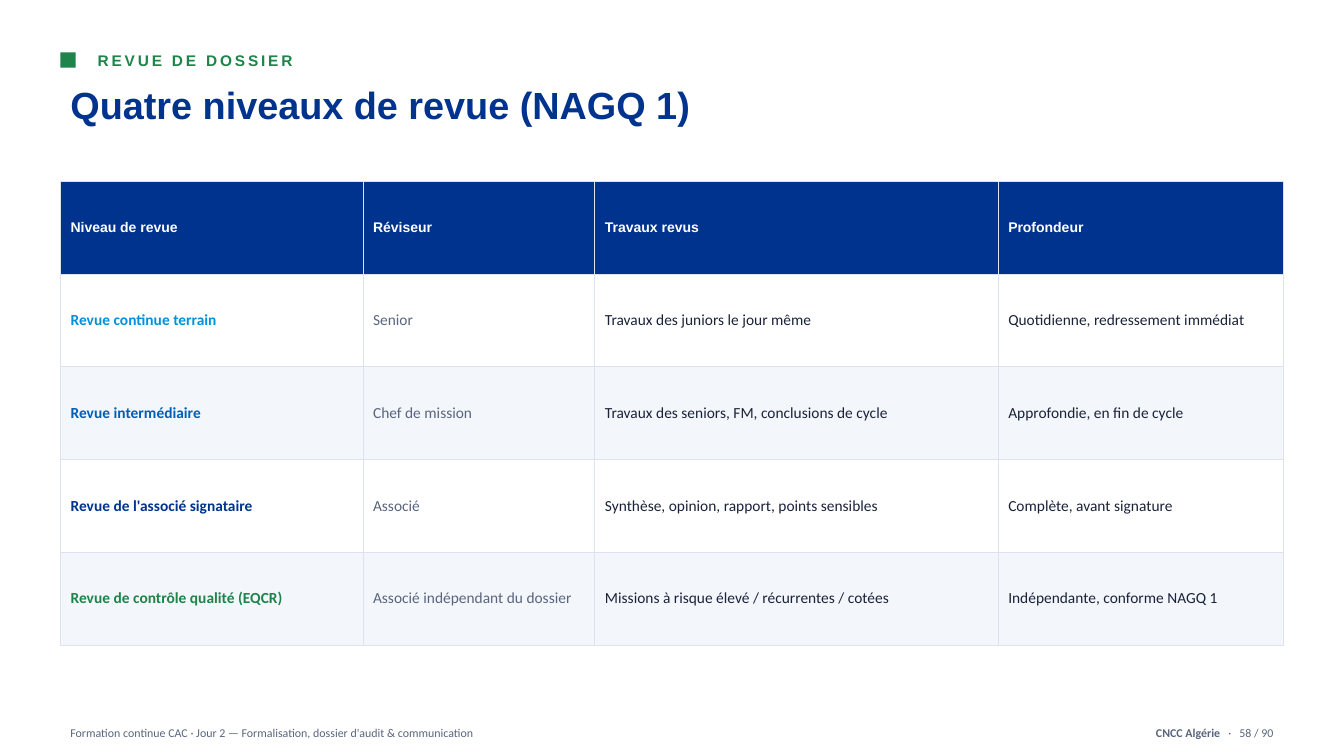
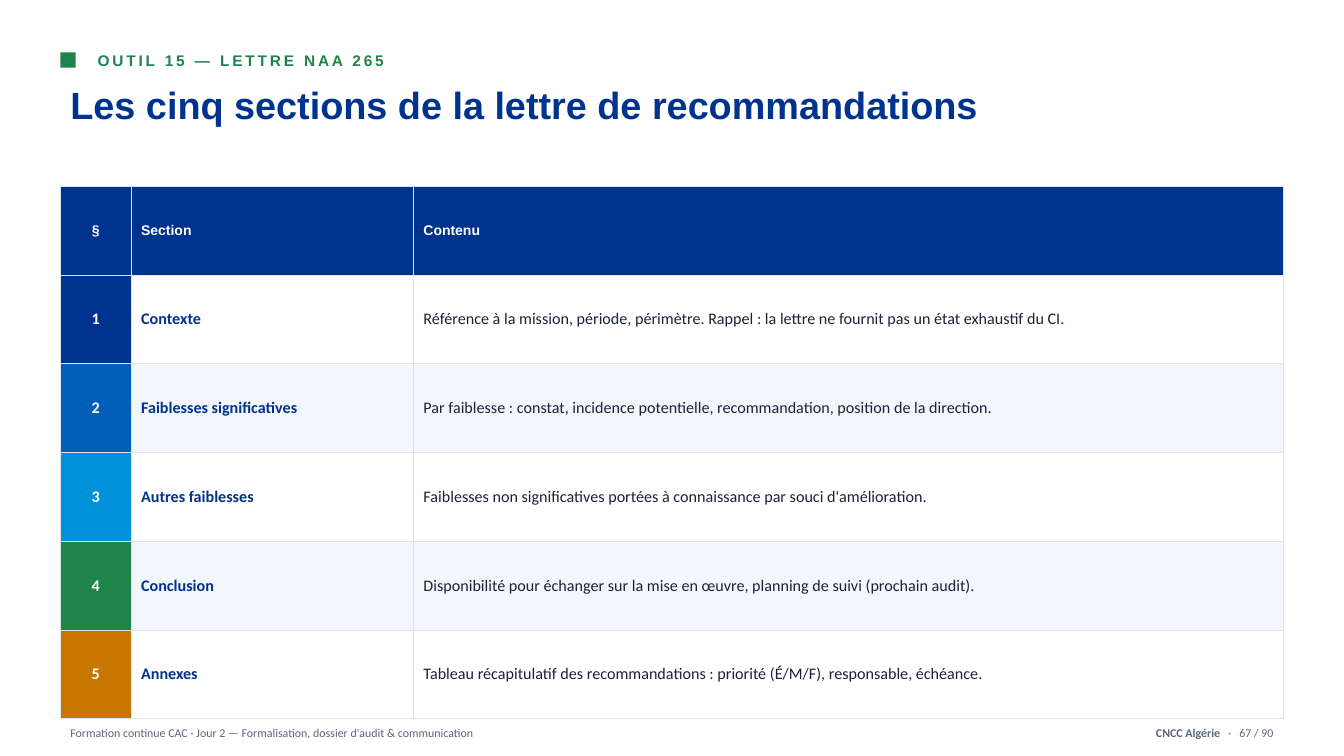
from dataclasses import dataclass

from lxml import etree
from pptx import Presentation
from pptx.dml.color import RGBColor as RGB
from pptx.enum.shapes import MSO_SHAPE as Preset
from pptx.enum.text import MSO_ANCHOR as Anchor, PP_ALIGN as Align
from pptx.oxml.ns import qn
from pptx.util import Inches, Pt


@dataclass(frozen=True)
class Theme:
    navy: str = "00338D"
    blue: str = "005EB8"
    sky: str = "0091DA"
    green: str = "1E8449"
    amber: str = "C77700"
    ink: str = "1A2238"
    grey: str = "59657C"
    white: str = "FFFFFF"
    stripe: str = "F3F6FB"
    border: str = "DCE3EF"
    head_font: str = "Arial"
    body_font: str = "Calibri"
    title_size: float = 27
    kicker_size: float = 11
    header_size: float = 10
    body_size: float = 11
    number_size: float = 11.5
    footer_size: float = 8.5


theme = Theme()
LEFT, WIDTH = 0.6, 12.13
FOOTER = "Formation continue CAC · Jour 2 — Formalisation, dossier d'audit & communication"
PAGE_COUNT = 90


def add_run(paragraph, text, name, size, color, bold=False, spacing=0):
    """Append a run; spacing is the letter spacing in points."""
    run = paragraph.add_run()
    run.text = text
    for attribute, value in dict(name=name, size=Pt(size), bold=bold).items():
        setattr(run.font, attribute, value)
    run.font.color.rgb = RGB.from_string(color)
    if spacing:
        run._r.get_or_add_rPr().set("spc", str(round(spacing * 100)))


def add_text_line(slide, left, top, width, height, anchor=Anchor.MIDDLE):
    """Add a wrapping text box and return its paragraph."""
    frame = slide.shapes.add_textbox(*map(Inches, (left, top, width, height))).text_frame
    frame.word_wrap = True
    frame.vertical_anchor = anchor
    return frame.paragraphs[0]


# A column style is (size, text colour, bold, fill, alignment);
# "accent" takes the colour of the row, a fill of None follows the stripes.
accent_column = (theme.body_size, "accent", True, None, Align.LEFT)
quiet_column = (theme.body_size, theme.grey, False, None, Align.LEFT)
plain_column = (theme.body_size, theme.ink, False, None, Align.LEFT)
number_column = (theme.number_size, theme.white, True, "accent", Align.CENTER)
section_column = (theme.number_size, theme.navy, True, None, Align.LEFT)
content_column = (theme.number_size, theme.ink, False, None, Align.LEFT)

pages = [
    dict(
        number=58,
        kicker="REVUE DE DOSSIER",
        title="Quatre niveaux de revue (NAGQ 1)",
        top=1.8,
        row_height=0.92,
        widths=[3, 2.3, 4, 2.83],
        styles=[accent_column, quiet_column, plain_column, plain_column],
        accents=[theme.sky, theme.blue, theme.navy, theme.green],
        rows=[
            ["Niveau de revue", "Réviseur", "Travaux revus", "Profondeur"],
            ["Revue continue terrain", "Senior", "Travaux des juniors le jour même",
             "Quotidienne, redressement immédiat"],
            ["Revue intermédiaire", "Chef de mission",
             "Travaux des seniors, FM, conclusions de cycle", "Approfondie, en fin de cycle"],
            ["Revue de l'associé signataire", "Associé",
             "Synthèse, opinion, rapport, points sensibles", "Complète, avant signature"],
            ["Revue de contrôle qualité (EQCR)", "Associé indépendant du dossier",
             "Missions à risque élevé / récurrentes / cotées", "Indépendante, conforme NAGQ 1"],
        ],
    ),
    dict(
        number=67,
        kicker="OUTIL 15 — LETTRE NAA 265",
        title="Les cinq sections de la lettre de recommandations",
        top=1.85,
        row_height=0.88,
        widths=[0.7, 2.8, 8.63],
        styles=[number_column, section_column, content_column],
        accents=[theme.navy, theme.blue, theme.sky, theme.green, theme.amber],
        rows=[
            ["§", "Section", "Contenu"],
            ["1", "Contexte", "Référence à la mission, période, périmètre. "
             "Rappel : la lettre ne fournit pas un état exhaustif du CI."],
            ["2", "Faiblesses significatives", "Par faiblesse : constat, incidence "
             "potentielle, recommandation, position de la direction."],
            ["3", "Autres faiblesses", "Faiblesses non significatives portées à "
             "connaissance par souci d'amélioration."],
            ["4", "Conclusion", "Disponibilité pour échanger sur la mise en œuvre, "
             "planning de suivi (prochain audit)."],
            ["5", "Annexes", "Tableau récapitulatif des recommandations : "
             "priorité (É/M/F), responsable, échéance."],
        ],
    ),
]

deck = Presentation()
deck.slide_width, deck.slide_height = Inches(13.33), Inches(7.5)

for page in pages:
    slide = deck.slides.add_slide(deck.slide_layouts[6])

    # Heading
    marker = slide.shapes.add_shape(
        Preset.RECTANGLE, Inches(LEFT), Inches(0.52), Inches(0.15), Inches(0.15))
    marker.shadow.inherit = False
    marker.fill.solid()
    marker.fill.fore_color.rgb = RGB.from_string(theme.green)
    marker.line.fill.background()
    kicker = add_text_line(slide, 0.87, 0.46, 11.86, 0.28)
    add_run(kicker, page["kicker"], theme.head_font, theme.kicker_size, theme.green, True, 2)
    title = add_text_line(slide, LEFT, 0.78, WIDTH, 0.95, Anchor.TOP)
    title.line_spacing = 0.98
    add_run(title, page["title"], theme.head_font, theme.title_size, theme.navy, True)

    # Table
    rows, widths = page["rows"], page["widths"]
    table = slide.shapes.add_table(
        len(rows), len(widths), Inches(LEFT), Inches(page["top"]),
        Inches(WIDTH), Inches(page["row_height"] * len(rows))).table
    table.horz_banding = False
    for column, width in zip(table.columns, widths):
        column.width = Inches(width)
    for r, texts in enumerate(rows):
        table.rows[r].height = Inches(page["row_height"])
        for c, text in enumerate(texts):
            size, color, bold, fill, align = page["styles"][c]
            font = theme.body_font
            if r == 0:
                font, size, color = theme.head_font, theme.header_size, theme.white
                bold, fill = True, theme.navy
            else:
                accent = page["accents"][r - 1]
                color = accent if color == "accent" else color
                stripe = theme.white if r % 2 else theme.stripe
                fill = accent if fill == "accent" else stripe
            cell = table.cell(r, c)
            cell.vertical_anchor = Anchor.MIDDLE
            paragraph = cell.text_frame.paragraphs[0]
            paragraph.alignment = align
            add_run(paragraph, text, font, size, color, bold)
            properties = cell._tc.get_or_add_tcPr()
            for side in ("lnL", "lnR", "lnT", "lnB"):
                edge = etree.SubElement(properties, qn(f"a:{side}"), w=str(Pt(0.75)))
                paint = etree.SubElement(edge, qn("a:solidFill"))
                etree.SubElement(paint, qn("a:srgbClr"), val=theme.border)
            cell.fill.solid()
            cell.fill.fore_color.rgb = RGB.from_string(fill)

    # Footer
    course = add_text_line(slide, LEFT, 7.12, 9.5, 0.3)
    add_run(course, FOOTER, theme.body_font, theme.footer_size, theme.grey)
    folio = add_text_line(slide, 9.63, 7.12, 3.1, 0.3)
    folio.alignment = Align.RIGHT
    for text, bold, spacing in [
        ("CNCC Algérie", True, 0), (" ", False, 3.8), ("·", False, 0),
        (" ", False, 3.8), (f"{page['number']} / {PAGE_COUNT}", False, 0),
    ]:
        add_run(folio, text, theme.body_font, theme.footer_size, theme.grey, bold, spacing)

deck.save("out.pptx")
